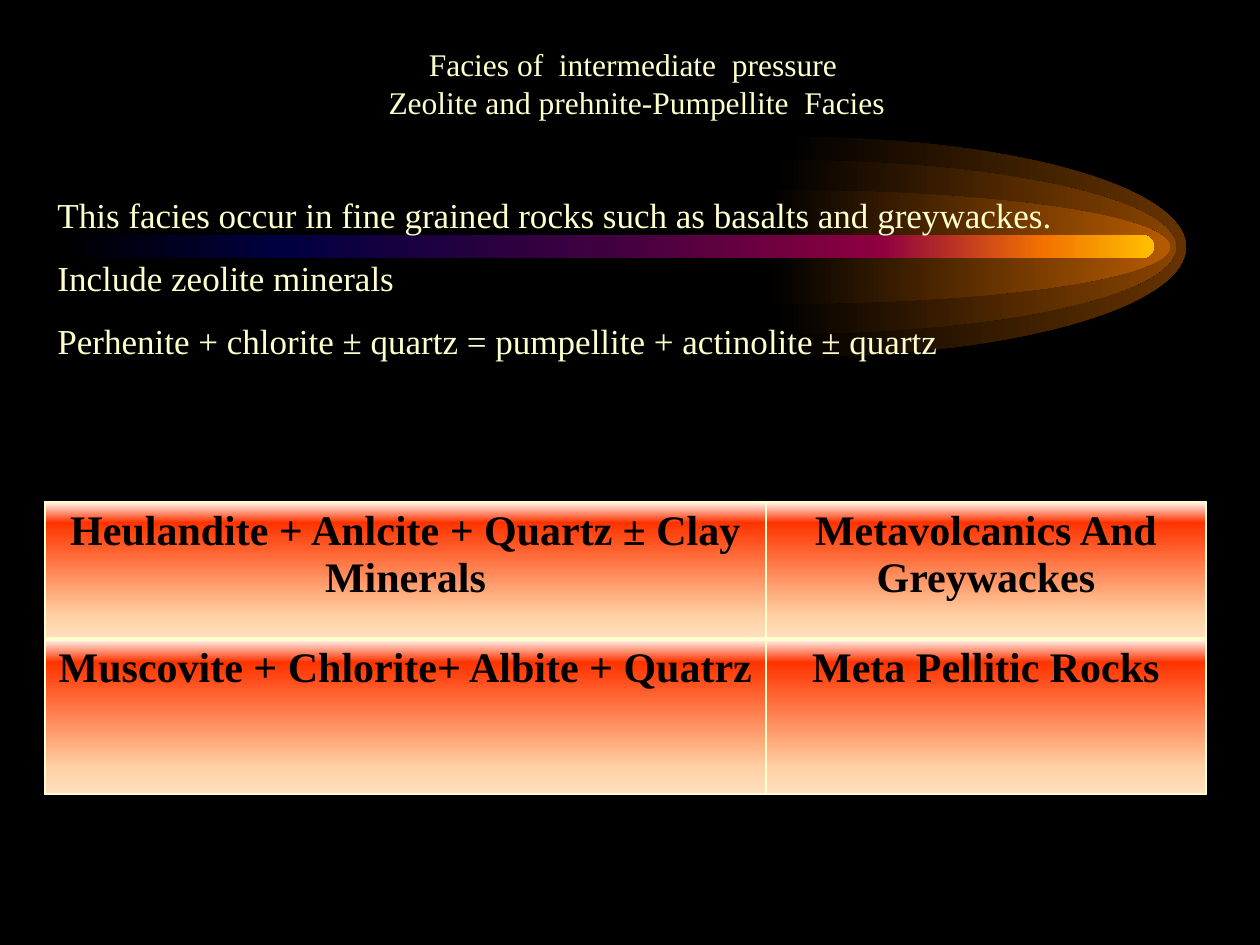
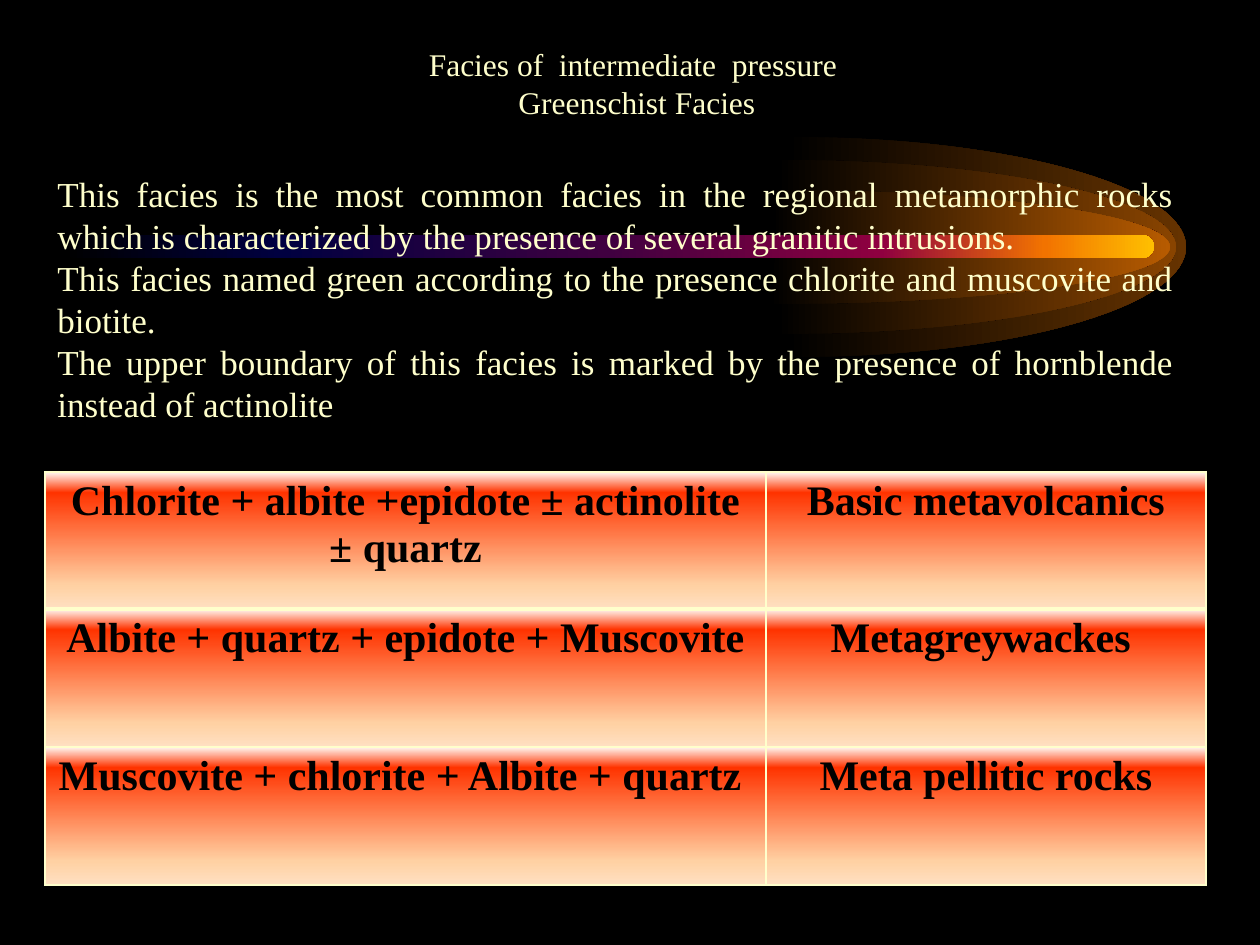
"""Build two slides on metamorphic facies of intermediate pressure."""
import lxml.etree
import pptx
import pptx.dml.color
import pptx.enum.shapes
import pptx.enum.text
import pptx.oxml.ns
import pptx.util

PX = 7257
BLACK = pptx.dml.color.RGBColor(0x00, 0x00, 0x00)
CREAM = pptx.dml.color.RGBColor(0xFF, 0xFF, 0xCC)
CENTER = pptx.enum.text.PP_ALIGN.CENTER
JUSTIFY = pptx.enum.text.PP_ALIGN.JUSTIFY
qn = pptx.oxml.ns.qn

GLOWS = [
    (792, 110, pptx.dml.color.RGBColor(0x66, 0x33, 0x00)),
    (782, 87, pptx.dml.color.RGBColor(0x89, 0x44, 0x00)),
    (776, 57, pptx.dml.color.RGBColor(0xB7, 0x5B, 0x00)),
]
GLOW_RADIUS = 394
COMET_MIDDLE = 247
ARC_PULL = 0.55
TAIL_STOPS = [
    (0, BLACK),
    (20, pptx.dml.color.RGBColor(0x00, 0x00, 0x40)),
    (50, pptx.dml.color.RGBColor(0x40, 0x00, 0x40)),
    (75, pptx.dml.color.RGBColor(0x8F, 0x00, 0x40)),
    (90, pptx.dml.color.RGBColor(0xF2, 0x73, 0x00)),
    (100, pptx.dml.color.RGBColor(0xFF, 0xBF, 0x00)),
]
CELL_STOPS = [
    (0, pptx.dml.color.RGBColor(0xFF, 0xFA, 0xF5)),
    (15, pptx.dml.color.RGBColor(0xFF, 0x33, 0x00)),
    (83, pptx.dml.color.RGBColor(0xFF, 0xD1, 0xA3)),
    (100, pptx.dml.color.RGBColor(0xFF, 0xE0, 0xC2)),
]
FRAME_FORMAT = {
    "word_wrap": True,
    "auto_size": pptx.enum.text.MSO_AUTO_SIZE.NONE,
    "vertical_anchor": pptx.enum.text.MSO_ANCHOR.TOP,
}
CONTENT_LEFT = 45
COLUMN_WIDTHS = [721, 440]

FACIES = [
    {
        "title": ["Facies of  intermediate  pressure ",
                  "Zeolite and prehnite-Pumpellite  Facies"],
        "description": [
            "This facies occur in fine grained rocks such as basalts and greywackes.",
            "Include zeolite minerals ",
            "Perhenite + chlorite ± quartz = pumpellite + actinolite ± quartz",
        ],
        "description_height": 246,
        "line_spacing": 1.5,
        "assemblages": [
            ("Heulandite + Anlcite + Quartz ± Clay Minerals",
             "Metavolcanics And Greywackes"),
            ("Muscovite + Chlorite+ Albite + Quatrz", "Meta Pellitic Rocks"),
        ],
        "assemblages_top": 502,
        "row_heights": [137, 155],
    },
    {
        "title": ["Facies of  intermediate  pressure ", "Greenschist Facies"],
        "description": [
            "This facies is the most common facies in the regional metamorphic rocks "
            "which is characterized by the presence of several granitic intrusions.",
            "This facies named green according to the presence chlorite and "
            "muscovite and biotite.",
            "The upper boundary of this facies is marked by the presence of "
            "hornblende instead of actinolite ",
        ],
        "description_height": 267,
        "line_spacing": 1.0,
        "assemblages": [
            ("Chlorite + albite +epidote ± actinolite ± quartz", "Basic metavolcanics"),
            ("Albite + quartz + epidote + Muscovite", "Metagreywackes "),
            ("Muscovite + chlorite + Albite + quartz ", "Meta pellitic rocks"),
        ],
        "assemblages_top": 472,
        "row_heights": [137, 138, 138],
    },
]


def write_lines(frame, lines, color, paragraph_format, font_format):
    frame.text = "\n".join(lines)
    for paragraph in frame.paragraphs:
        for name, value in paragraph_format.items():
            setattr(paragraph, name, value)
        for run in paragraph.runs:
            run.font.name = "Times New Roman"
            run.font.color.rgb = color
            for name, value in font_format.items():
                setattr(run.font, name, value)


def blend(fill, stops, angle):
    fill.gradient()
    fill.gradient_angle = angle
    stop_list = fill._xPr.find(qn("a:gradFill")).find(qn("a:gsLst"))
    for old_stop in list(stop_list):
        stop_list.remove(old_stop)
    for position, color in stops:
        stop = lxml.etree.SubElement(stop_list, qn("a:gs"), pos=str(position * 1000))
        lxml.etree.SubElement(stop, qn("a:srgbClr"), val=str(color))


deck = pptx.Presentation()
deck.slide_width = 1260 * PX
deck.slide_height = 945 * PX
master = deck.slide_master
backdrop = master.background.fill
backdrop.solid()
backdrop.fore_color.rgb = BLACK
slides = [deck.slides.add_slide(deck.slide_layouts[5]) for _ in FACIES]

comet = slides[0].shapes.add_group_shape()
comet_parts = []
for center, half_height, glow_color in GLOWS:
    top, bottom = COMET_MIDDLE - half_height, COMET_MIDDLE + half_height
    corners = [(center + GLOW_RADIUS, COMET_MIDDLE), (center, bottom),
               (center - 6, bottom), (center, COMET_MIDDLE)]
    outline = comet.shapes.build_freeform(center * PX, top * PX, scale=1.0)
    outline.add_line_segments([(x * PX, y * PX) for x, y in corners], close=True)
    glow = outline.convert_to_shape()
    route = next(glow._element.iter(qn("a:path")))
    start, tip, end = [
        (int(point.get("x")), int(point.get("y")))
        for point in list(route.iter(qn("a:pt")))[:3]
    ]
    reach, drop = round((tip[0] - start[0]) * ARC_PULL), round((tip[1] - start[1]) * ARC_PULL)
    arcs = [
        [(start[0] + reach, start[1]), (tip[0], tip[1] - drop), tip],
        [(tip[0], tip[1] + drop), (end[0] + reach, end[1]), end],
    ]
    for straight, arc in zip(route.findall(qn("a:lnTo"))[:2], arcs):
        curve = lxml.etree.Element(qn("a:cubicBezTo"))
        for x, y in arc:
            lxml.etree.SubElement(curve, qn("a:pt"), x=str(x), y=str(y))
        route.replace(straight, curve)
    comet_parts.append((glow, [(0, BLACK), (100, glow_color)]))
tail = comet.shapes.add_shape(
    pptx.enum.shapes.MSO_SHAPE.ROUNDED_RECTANGLE,
    63 * PX, 235 * PX, 1091 * PX, 23 * PX)
tail.adjustments[0] = 0.5
comet_parts.append((tail, TAIL_STOPS))
for part, stops in comet_parts:
    part.shadow.inherit = False
    part.line.fill.background()
    blend(part.fill, stops, 0)
for number, identity in enumerate(comet._element.iter(qn("p:cNvPr")), start=20):
    identity.set("id", str(number))
master.shapes._spTree.append(comet._element)

for slide, facies in zip(slides, FACIES):
    title = slide.shapes.title
    title_place = {"left": 116, "top": 39, "width": 1042, "height": 89}
    for name, value in title_place.items():
        setattr(title, name, value * PX)
    description = slide.shapes.add_textbox(
        CONTENT_LEFT * PX, 166 * PX, 1141 * PX, facies["description_height"] * PX)
    for frame in (title.text_frame, description.text_frame):
        for name, value in FRAME_FORMAT.items():
            setattr(frame, name, value)
    write_lines(title.text_frame, facies["title"], CREAM,
                {"alignment": CENTER}, {"size": pptx.util.Pt(18)})
    write_lines(description.text_frame, facies["description"], CREAM,
                {"alignment": JUSTIFY, "line_spacing": facies["line_spacing"]},
                {"size": pptx.util.Pt(20)})

    rows = facies["assemblages"]
    heights = facies["row_heights"]
    assemblages = slide.shapes.add_table(
        len(rows), len(COLUMN_WIDTHS), CONTENT_LEFT * PX, facies["assemblages_top"] * PX,
        sum(COLUMN_WIDTHS) * PX, sum(heights) * PX).table
    for column, width in zip(assemblages.columns, COLUMN_WIDTHS):
        column.width = width * PX
    for row_index, (texts, height) in enumerate(zip(rows, heights)):
        assemblages.rows[row_index].height = height * PX
        for column_index, text in enumerate(texts):
            cell = assemblages.cell(row_index, column_index)
            write_lines(cell.text_frame, [text], BLACK, {"alignment": CENTER},
                        {"size": pptx.util.Pt(24), "bold": True})
            blend(cell.fill, CELL_STOPS, 270)
            for order, side in enumerate(("lnL", "lnR", "lnT", "lnB")):
                points = 3 if side == "lnB" and row_index == 0 else 1
                border = lxml.etree.Element(qn("a:" + side), w=str(pptx.util.Pt(points)))
                paint = lxml.etree.SubElement(border, qn("a:solidFill"))
                lxml.etree.SubElement(paint, qn("a:srgbClr"), val=str(CREAM))
                cell._tc.get_or_add_tcPr().insert(order, border)

deck.save("out.pptx")
